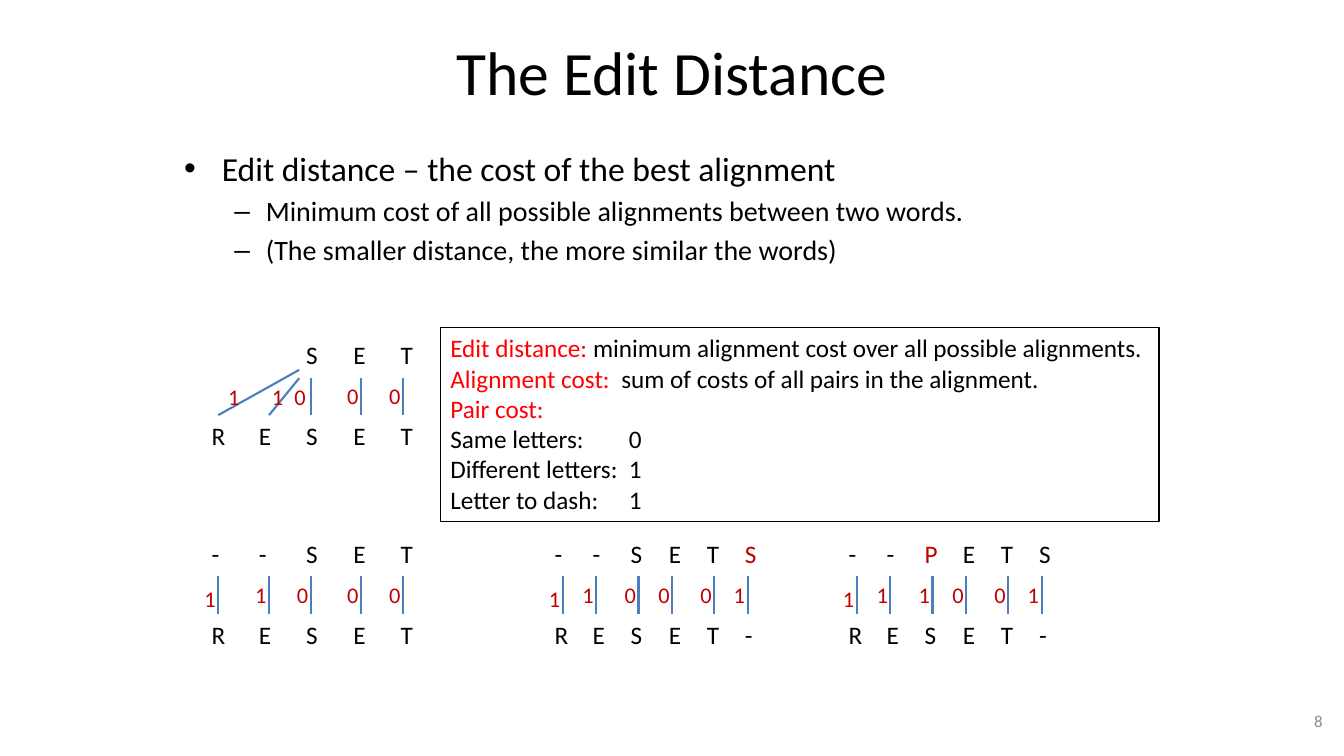
from lxml.etree import SubElement
from pptx import Presentation
from pptx.dml.color import RGBColor
from pptx.enum.shapes import MSO_CONNECTOR, MSO_SHAPE
from pptx.enum.text import MSO_ANCHOR, PP_ALIGN
from pptx.oxml.ns import qn
from pptx.util import Cm, Pt

BLACK = RGBColor(0x00, 0x00, 0x00)
GRAY = RGBColor(0x8C, 0x8C, 0x8C)
RED = RGBColor(0xFF, 0x00, 0x00)
DARK_RED = RGBColor(0xC0, 0x00, 0x00)
BLUE = RGBColor(0x4B, 0x7E, 0xBC)
FONT = "Calibri"

TITLE = "The Edit Distance"
PAGE = "8"
BULLETS = [
    ("•", "Edit distance – the cost of the best alignment", 24, 0.95, 0.95),
    ("–", "Minimum cost of all possible alignments between two words.", 20, 2.06, 0.79),
    ("–", "(The smaller distance, the more similar the words)", 20, 2.06, 0.79),
]
DEFINITIONS = [
    [("Edit distance: ", RED), ("minimum alignment cost over all possible alignments.", BLACK)],
    [("Alignment cost:  ", RED), ("sum of costs of all pairs in the alignment.", BLACK)],
    [("Pair cost:", RED)],
    [("Same letters:\t0", BLACK)],
    [("Different letters:\t1", BLACK)],
    [("Letter to dash:\t1", BLACK)],
]

FIVE_LINES = [0.42, 1.7, 2.75, 4.02, 5.08]
SIX_LINES = [0.46, 1.31, 2.37, 3.22, 4.28, 5.12]
FIRST_LOW = {0: (-0.6, 1.15)}
ALIGNMENTS = [
    dict(at=(5.08, 8.46), col=1.19, top=["", "", "S", "E", "T"], bottom="RESET",
         costs="11000", lines=FIVE_LINES, red=None,
         slants={0: (2.46, 0.86), 1: (2.46, 1.07)},
         shifts={0: (0, 1.07), 1: (-0.18, 1.07), 2: (-0.66, 1.07)}),
    dict(at=(5.08, 13.46), col=1.19, top="--SET", bottom="RESET",
         costs="11000", lines=FIVE_LINES, red=None, slants={}, shifts=FIRST_LOW),
    dict(at=(13.72, 13.46), col=0.96, top="--SETS", bottom="RESET-",
         costs="110001", lines=SIX_LINES, red=5, slants={}, shifts=FIRST_LOW),
    dict(at=(21.13, 13.46), col=0.96, top="--PETS", bottom="RESET-",
         costs="111001", lines=SIX_LINES, red=2, slants={}, shifts=FIRST_LOW),
]
ROW = 1.02
LINE_TOP, LINE_END = 1.06, 2.0
COST_SHIFT = (-0.6, 1.05)


def style(r, size, color):
    r.font.name = FONT
    r.font.size = Pt(size)
    r.font.color.rgb = color


def add_text(s, box, text, size, color, align=PP_ALIGN.LEFT, anchor=MSO_ANCHOR.TOP, wrap=True):
    tf = s.shapes.add_textbox(*map(Cm, box)).text_frame
    tf.word_wrap = wrap
    tf.vertical_anchor = anchor
    tf.text = text
    p = tf.paragraphs[0]
    p.alignment = align
    style(p.runs[0], size, color)


def add_bullets(s):
    tf = s.shapes.add_textbox(Cm(4.39), Cm(3.6), Cm(24.77), Cm(4)).text_frame
    tf.word_wrap = True
    for i, (mark, text, size, margin, hang) in enumerate(BULLETS):
        p = tf.add_paragraph() if i else tf.paragraphs[0]
        p.text = text
        p.space_before = Pt(size / 5)
        style(p.runs[0], size, BLACK)
        pPr = p._p.get_or_add_pPr()
        pPr.set("marL", str(Cm(margin)))
        pPr.set("indent", str(-Cm(hang)))
        SubElement(pPr, qn("a:buFont"), typeface="Arial")
        SubElement(pPr, qn("a:buChar"), char=mark)


def add_line(s, x1, y1, x2, y2):
    line = s.shapes.add_connector(MSO_CONNECTOR.STRAIGHT, Cm(x1), Cm(y1), Cm(x2), Cm(y2))
    line.line.color.rgb = BLUE
    line.line.width = Pt(1.5)
    SubElement(line._element.spPr, qn("a:effectLst"))


def add_letters(s, a):
    n = len(a["bottom"])
    x, y = a["at"]
    frame = s.shapes.add_table(3, n, Cm(x), Cm(y), Cm(n * a["col"]), Cm(3 * ROW))
    table = frame.table
    table.first_row = False
    table.horz_banding = False
    for column in table.columns:
        column.width = Cm(a["col"])
    for cell in table.iter_cells():
        cell.fill.background()
    for row, letters in ((0, a["top"]), (2, a["bottom"])):
        for i, letter in enumerate(letters):
            if letter:
                p = table.cell(row, i).text_frame.paragraphs[0]
                p.text = letter
                style(p.runs[0], 18, DARK_RED if (row, i) == (0, a["red"]) else BLACK)


def add_alignment(s, a):
    add_letters(s, a)
    x, y = a["at"]
    for i, (line_x, cost) in enumerate(zip(a["lines"], a["costs"])):
        top_x, top_y = a["slants"].get(i, (line_x, LINE_TOP))
        add_line(s, x + top_x, y + top_y, x + line_x, y + LINE_END)
        dx, dy = a["shifts"].get(i, COST_SHIFT)
        add_text(s, (x + line_x + dx, y + dy, 0.81, 0.94), cost, 16, DARK_RED, wrap=False)


def add_definitions(s):
    sp = s.shapes.add_shape(MSO_SHAPE.RECTANGLE, Cm(11.1), Cm(8.26), Cm(18.11), Cm(4.88))
    sp.shadow.inherit = False
    sp.fill.background()
    sp.line.color.rgb = BLACK
    sp.line.width = Pt(0.75)
    tf = sp.text_frame
    tf.word_wrap = True
    tf.vertical_anchor = MSO_ANCHOR.TOP
    for i, parts in enumerate(DEFINITIONS):
        p = tf.add_paragraph() if i else tf.paragraphs[0]
        p.alignment = PP_ALIGN.LEFT
        tabs = SubElement(p._p.get_or_add_pPr(), qn("a:tabLst"))
        SubElement(tabs, qn("a:tab"), pos=str(Cm(4.5)), algn="l")
        for text, color in parts:
            r = p.add_run()
            r.text = text
            style(r, 18, color)


def main():
    prs = Presentation()
    prs.slide_width, prs.slide_height = Cm(33.87), Cm(19.05)
    s = prs.slides.add_slide(prs.slide_layouts[6])
    add_text(s, (1.7, 0.2, 30.48, 3.18), TITLE, 44, BLACK, PP_ALIGN.CENTER, MSO_ANCHOR.MIDDLE)
    add_bullets(s)
    add_text(s, (25.68, 17.66, 7.9, 1.01), PAGE, 12, GRAY, PP_ALIGN.RIGHT, MSO_ANCHOR.MIDDLE)
    for a in ALIGNMENTS:
        add_alignment(s, a)
    add_definitions(s)
    prs.save("out.pptx")


if __name__ == "__main__":
    main()
